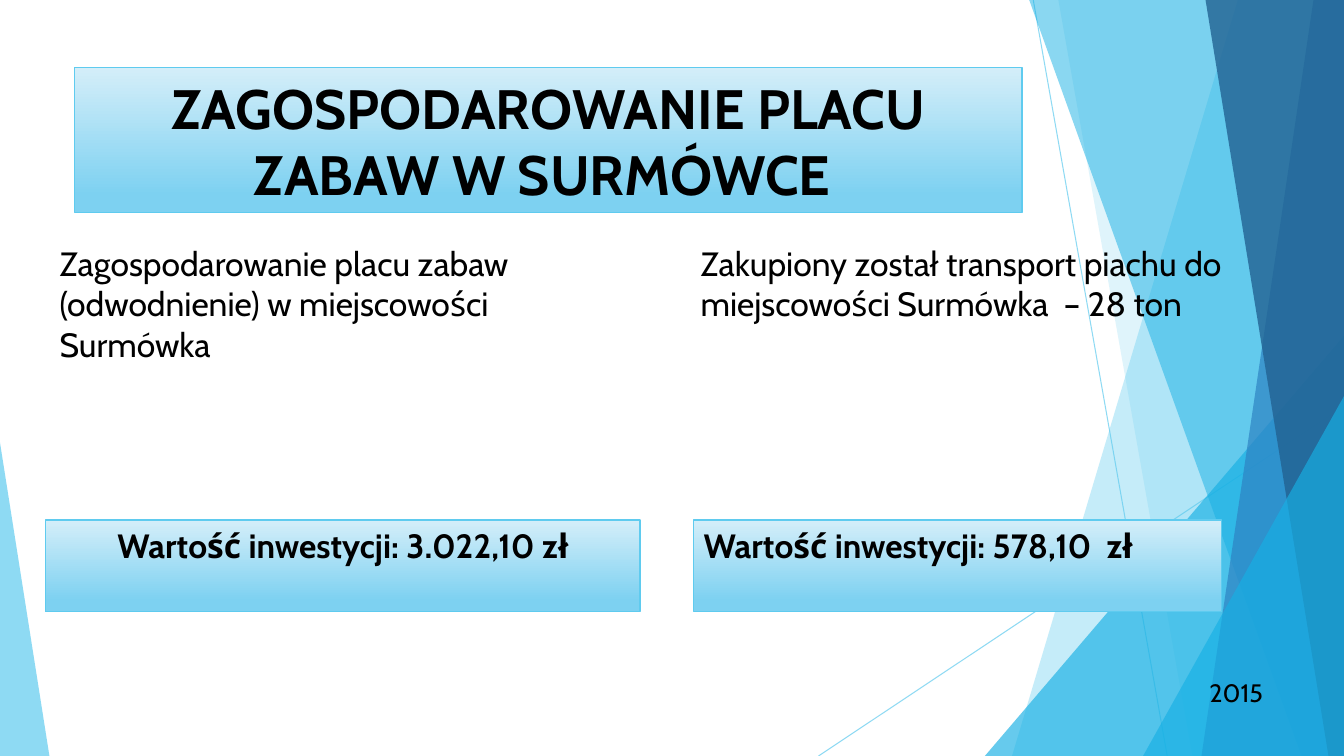
import pptx
import pptx.util
import pptx.dml.color
import pptx.enum.shapes
import pptx.enum.text
import pptx.oxml.ns
from dataclasses import dataclass
from lxml import etree

Align = pptx.enum.text.PP_ALIGN
Anchor = pptx.enum.text.MSO_ANCHOR


@dataclass(frozen=True)
class Theme:
    font: str = "Cabin"
    ink: str = "000000"
    sky: str = "5FCBEF"
    azure: str = "17B0E4"
    blue: str = "2E83C3"
    navy: str = "226292"
    panel_top: str = "D4EEF9"
    panel_bottom: str = "7DD1F1"
    title_size: float = 39.6
    body_size: float = 24
    year_size: float = 18
    panel_line: float = 1
    ray_line: float = 0.75


THEME = Theme()

HEADING = ("ZAGOSPODAROWANIE PLACU ZABAW W SURMÓWCE ", (5.55, 8.93, 70.5, 19.2))
YEAR = ("2015", (89.25, 88.93, 9.3, 5.33))
DESCRIPTION_TOP = 31.47
VALUE_TOP, VALUE_HEIGHT = 68.8, 12.13
INVESTMENTS = [
    {
        "slots": (1, 2),
        "value": "Wartość inwestycji: 3.022,10 zł",
        "value_span": (3.38, 44.25),
        "align": Align.CENTER,
        "description": "Zagospodarowanie placu zabaw (odwodnienie) w miejscowości Surmówka",
        "description_box": (3.68, DESCRIPTION_TOP, 43.58, 39.07),
    },
    {
        "slots": (3, 4),
        "value": "Wartość inwestycji: 578,10  zł",
        "value_span": (51.6, 39.3),
        "align": Align.LEFT,
        "description": "Zakupiony został transport piachu do miejscowości Surmówka  – 28 ton",
        "description_box": (51.38, DESCRIPTION_TOP, 40.95, 17.47),
    },
]

RAYS = [(76.88, 0, 86.85, 100), (100, 53.73, 60.9, 100)]
FACETS = [
    ("band", (92.1, 75.3), THEME.sky, 36),
    ("band", (78.75, 88.73), THEME.sky, 20),
    ("corner", (73.28, 44.4, 26.72, 1), THEME.azure, 66),
    ("band", (76.58, 96.83), THEME.azure, 50),
    ("band", (97.73, 89.4), THEME.blue, 70),
    ("band", (89.7, 98.85), THEME.navy, 80),
    ("corner", (85.05, 52.4, 14.95, 1), THEME.azure, 66),
    ("corner", (0, 58.53, 3.68, 0), THEME.sky, 70),
]

deck = pptx.Presentation()
deck.slide_width = pptx.util.Inches(13.333)
deck.slide_height = pptx.util.Inches(7.5)
slide = deck.slides.add_slide(deck.slide_layouts[4])
shapes = slide.shapes


def across(share):
    return round(deck.slide_width * share / 100)


def down(share):
    return round(deck.slide_height * share / 100)


def frame(left, top, width, height):
    return across(left), down(top), across(width), down(height)


def rgb(code):
    return pptx.dml.color.RGBColor.from_string(code)


def set_opacity(part, percent):
    qn = pptx.oxml.ns.qn
    color = part.element.spPr.find(".//" + qn("a:srgbClr"))
    etree.SubElement(color, qn("a:alpha"), val=str(percent * 1000))


def draw_ray(x1, y1, x2, y2):
    ray = shapes.add_connector(
        pptx.enum.shapes.MSO_CONNECTOR.STRAIGHT, across(x1), down(y1), across(x2), down(y2)
    )
    ray.line.color.rgb = rgb(THEME.sky)
    ray.line.width = pptx.util.Pt(THEME.ray_line)
    set_opacity(ray, 70)
    etree.SubElement(ray.element.spPr, pptx.oxml.ns.qn("a:effectLst"))


def draw_facet(kind, geometry, color, opacity):
    if kind == "band":
        top_x, bottom_x = geometry
        outline = shapes.build_freeform(across(top_x), 0)
        outline.add_line_segments(
            [(across(100), 0), (across(100), down(100)), (across(bottom_x), down(100))]
        )
        facet = outline.convert_to_shape()
    else:
        left, top, width, apex = geometry
        facet = shapes.add_shape(
            pptx.enum.shapes.MSO_SHAPE.ISOSCELES_TRIANGLE, *frame(left, top, width, 100 - top)
        )
        facet.adjustments[0] = apex
    facet.shadow.inherit = False
    facet.fill.solid()
    facet.fill.fore_color.rgb = rgb(color)
    facet.line.fill.background()
    set_opacity(facet, opacity)


def write(holder, box, text, size, bold=False, align=Align.LEFT, anchor=Anchor.TOP):
    holder.left, holder.top, holder.width, holder.height = frame(*box)
    text_frame = holder.text_frame
    text_frame.word_wrap = True
    text_frame.auto_size = pptx.enum.text.MSO_AUTO_SIZE.NONE
    text_frame.vertical_anchor = anchor
    paragraph = text_frame.paragraphs[0]
    paragraph.alignment = align
    paragraph.space_before = pptx.util.Pt(0)
    properties = paragraph._p.get_or_add_pPr()
    properties.set("marL", "0")
    properties.set("indent", "0")
    etree.SubElement(properties, pptx.oxml.ns.qn("a:buNone"))
    run = paragraph.add_run()
    run.text = text
    run.font.name = THEME.font
    run.font.size = pptx.util.Pt(size)
    run.font.bold = bold
    run.font.color.rgb = rgb(THEME.ink)
    shapes.element.append(holder.element)


def paint_panel(panel):
    panel.fill.gradient()
    panel.fill.gradient_angle = 270
    stops = zip(panel.fill.gradient_stops, (0, 0.88), (THEME.panel_top, THEME.panel_bottom))
    for stop, position, color in stops:
        stop.position = position
        stop.color.rgb = rgb(color)
    panel.line.color.rgb = rgb(THEME.sky)
    panel.line.width = pptx.util.Pt(THEME.panel_line)


for ray_ends in RAYS:
    draw_ray(*ray_ends)
for facet_spec in FACETS:
    draw_facet(*facet_spec)

heading_text, heading_box = HEADING
write(shapes.title, heading_box, heading_text, THEME.title_size, True, Align.CENTER, Anchor.MIDDLE)
paint_panel(shapes.title)

for investment in INVESTMENTS:
    value, description = (slide.placeholders[slot] for slot in investment["slots"])
    left, width = investment["value_span"]
    value_box = (left, VALUE_TOP, width, VALUE_HEIGHT)
    write(value, value_box, investment["value"], THEME.body_size, True, investment["align"])
    paint_panel(value)
    write(description, investment["description_box"], investment["description"], THEME.body_size)

year_text, year_box = YEAR
write(shapes.add_textbox(*frame(*year_box)), year_box, year_text, THEME.year_size)

deck.save("out.pptx")
